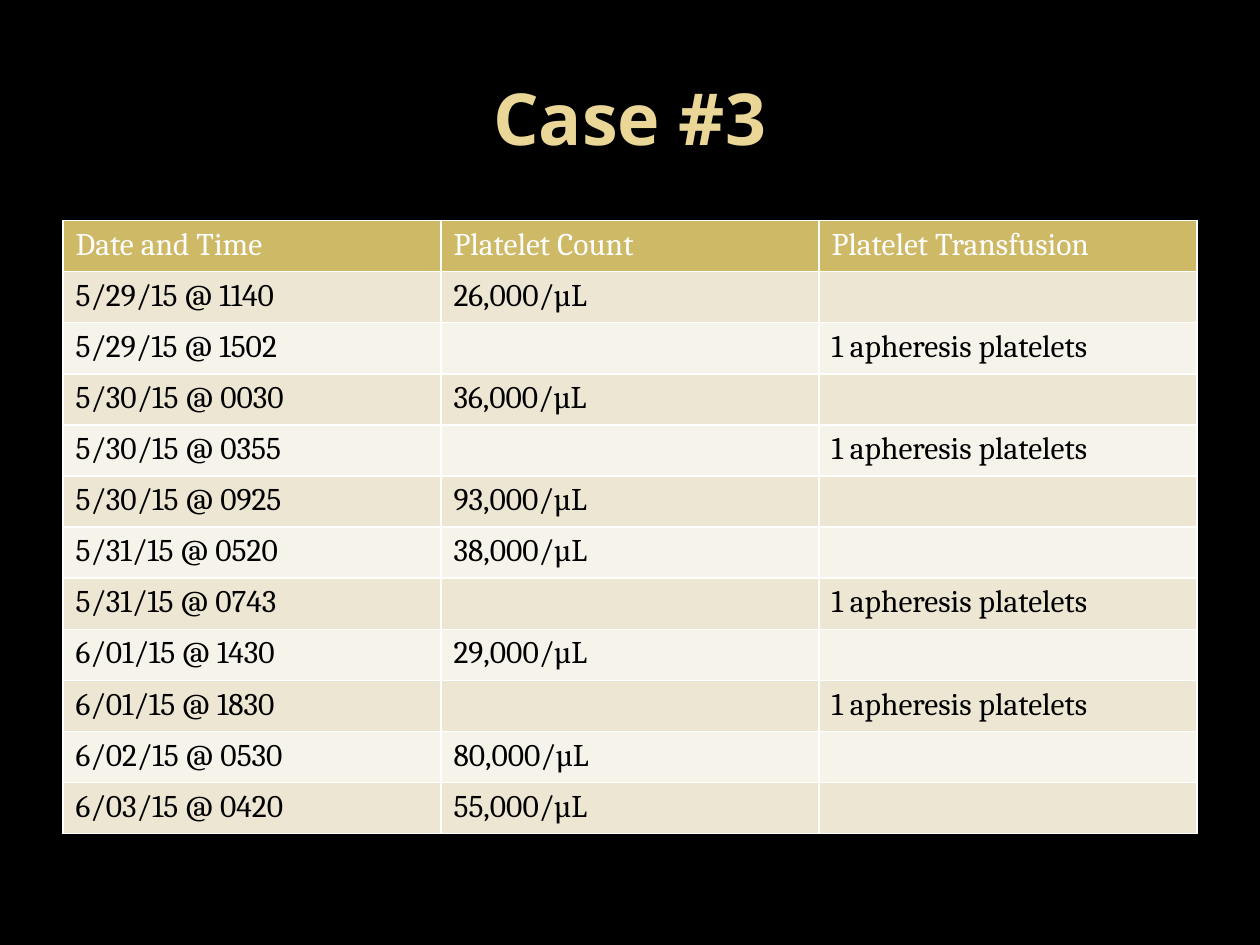
import pptx
import pptx.util
import pptx.dml.color
import pptx.enum.text

Inches = pptx.util.Inches
Color = pptx.dml.color.RGBColor.from_string

theme = {
    "back": "000000",
    "head": "CEB966",
    "bands": ("EDE6D3", "F6F3EA"),
    "title": {"name": "Noto Sans", "size": pptx.util.Pt(41), "bold": True},
    "cell": {"name": "Cambria", "size": pptx.util.Pt(18), "bold": False},
    "title ink": "EAD696",
    "head ink": "FFFFFF",
    "body ink": "000000",
}

DOSE = "1 apheresis platelets"
rows = [
    ("Date and Time", "Platelet Count", "Platelet Transfusion"),
    ("5/29/15 @ 1140", "26,000/µL", ""),
    ("5/29/15 @ 1502", "", DOSE),
    ("5/30/15 @ 0030", "36,000/µL", ""),
    ("5/30/15 @ 0355", "", DOSE),
    ("5/30/15 @ 0925", "93,000/µL", ""),
    ("5/31/15 @ 0520", "38,000/µL", ""),
    ("5/31/15 @ 0743", "", DOSE),
    ("6/01/15 @ 1430", "29,000/µL", ""),
    ("6/01/15 @ 1830", "", DOSE),
    ("6/02/15 @ 0530", "80,000/µL", ""),
    ("6/03/15 @ 0420", "55,000/µL", ""),
]


def style(font, look, ink):
    for key, value in look.items():
        setattr(font, key, value)
    font.color.rgb = Color(ink)


# Slide and background
deck = pptx.Presentation()
deck.slide_width, deck.slide_height = Inches(10), Inches(7.5)
slide = deck.slides.add_slide(deck.slide_layouts[5])
slide.background.fill.solid()
slide.background.fill.fore_color.rgb = Color(theme["back"])
edge = deck.slide_width // 20
wide = deck.slide_width - 2 * edge

# Title
title = slide.shapes.title
place = {"left": edge, "top": Inches(0.3), "width": wide, "height": Inches(1.25)}
for key, value in place.items():
    setattr(title, key, value)
title.text_frame.text = "Case #3"
title.text_frame.vertical_anchor = pptx.enum.text.MSO_ANCHOR.MIDDLE
line = title.text_frame.paragraphs[0]
line.alignment = pptx.enum.text.PP_ALIGN.CENTER
style(line.runs[0].font, theme["title"], theme["title ink"])

# Table: the default style draws the white grid
table = slide.shapes.add_table(
    len(rows), len(rows[0]), edge, Inches(1.75), wide, Inches(4.87)).table
for r, row in enumerate(rows):
    fill = theme["bands"][(r - 1) % 2] if r else theme["head"]
    ink = theme["body ink"] if r else theme["head ink"]
    for c, text in enumerate(row):
        cell = table.cell(r, c)
        cell.fill.solid()
        cell.fill.fore_color.rgb = Color(fill)
        if text:
            cell.text = text
            style(cell.text_frame.paragraphs[0].runs[0].font, theme["cell"], ink)

deck.save("out.pptx")
